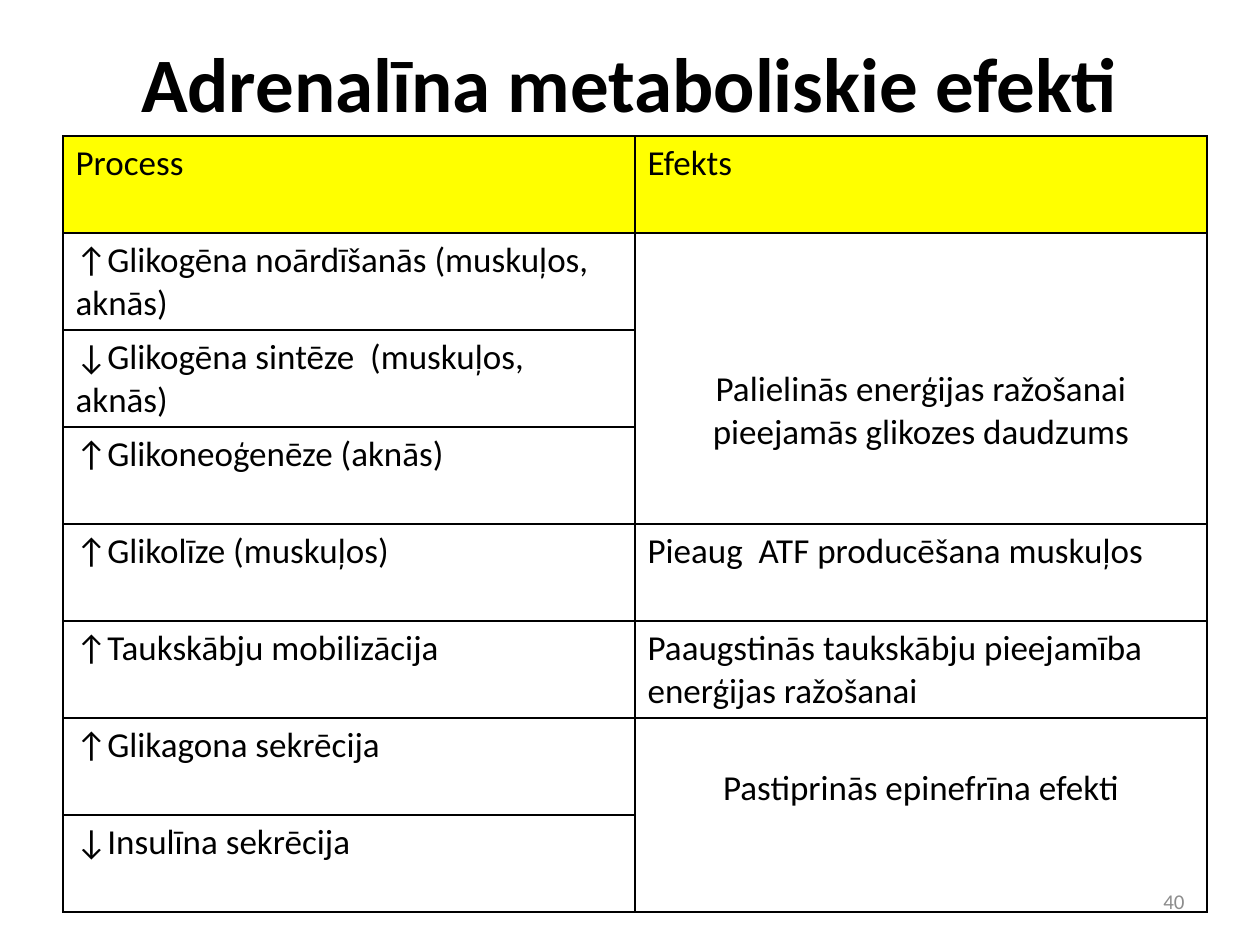
from dataclasses import dataclass

import pptx
import pptx.dml.color
import pptx.enum.text
import pptx.oxml
import pptx.oxml.ns
import pptx.util
from pptx.util import Inches

ALIGN = pptx.enum.text.PP_ALIGN
FONT = "Calibri"
BLACK = "000000"
YELLOW = "FFFF00"
GREY = "8C8C8C"
ROW_HEIGHT = 0.77
COLUMN_WIDTH = 4.54


@dataclass
class Effect:
    text: str
    processes: list[str]
    top_margin: float = 0.05
    align: ALIGN = ALIGN.LEFT
    fill: str | None = None


EFFECTS = [
    Effect("Efekts", ["Process"], fill=YELLOW),
    Effect(
        "Palielinās enerģijas ražošanai pieejamās glikozes daudzums",
        [
            "↑Glikogēna noārdīšanās (muskuļos, aknās)",
            "↓Glikogēna sintēze  (muskuļos, aknās)",
            "↑Glikoneoģenēze (aknās)",
        ],
        top_margin=1.07,
        align=ALIGN.CENTER,
    ),
    Effect("Pieaug  ATF producēšana muskuļos", ["↑Glikolīze (muskuļos)"]),
    Effect(
        "Paaugstinās taukskābju pieejamība enerģijas ražošanai",
        ["↑Taukskābju mobilizācija"],
    ),
    Effect(
        "Pastiprinās epinefrīna efekti",
        ["↑Glikagona sekrēcija", "↓Insulīna sekrēcija"],
        top_margin=0.39,
        align=ALIGN.CENTER,
    ),
]


def color(value: str) -> pptx.dml.color.RGBColor:
    return pptx.dml.color.RGBColor.from_string(value)


def write(frame, text: str, size: float, align: ALIGN,
          ink: str = BLACK, bold: bool = False) -> None:
    frame.text = text
    paragraph = frame.paragraphs[0]
    paragraph.alignment = align
    for run in paragraph.runs:
        run.font.name = FONT
        run.font.size = pptx.util.Pt(size)
        run.font.bold = bold
        run.font.color.rgb = color(ink)


def add_label(slide, text: str, left: float, top: float, width: float, height: float,
              size: float, align: ALIGN, ink: str = BLACK, bold: bool = False) -> None:
    label = slide.shapes.add_textbox(
        Inches(left), Inches(top), Inches(width), Inches(height))
    label.text_frame.word_wrap = True
    label.text_frame.vertical_anchor = pptx.enum.text.MSO_ANCHOR.MIDDLE
    write(label.text_frame, text, size, align, ink, bold)


def style_cell(cell, fill: str | None) -> None:
    properties = cell._tc.get_or_add_tcPr()
    for side in ("lnL", "lnR", "lnT", "lnB"):
        properties.append(pptx.oxml.parse_xml(
            f'<a:{side} {pptx.oxml.ns.nsdecls("a")} w="{pptx.util.Pt(1)}">'
            f'<a:solidFill><a:srgbClr val="{BLACK}"/></a:solidFill></a:{side}>'))
    if fill:
        cell.fill.solid()
        cell.fill.fore_color.rgb = color(fill)
    else:
        cell.fill.background()


def add_effects_table(slide, effects: list[Effect]) -> None:
    row_count = sum(len(effect.processes) for effect in effects)
    table = slide.shapes.add_table(
        row_count, 2, Inches(0.5), Inches(1.08),
        Inches(2 * COLUMN_WIDTH), Inches(row_count * ROW_HEIGHT)).table
    table.first_row = False
    table.horz_banding = False
    for row in table.rows:
        row.height = Inches(ROW_HEIGHT)

    first = 0
    for effect in effects:
        last = first + len(effect.processes) - 1
        for row, process in enumerate(effect.processes, first):
            for column in range(2):
                style_cell(table.cell(row, column), effect.fill)
            write(table.cell(row, 0).text_frame, process, 20, ALIGN.LEFT)
        outcome = table.cell(first, 1)
        if last > first:
            outcome.merge(table.cell(last, 1))
        outcome.margin_top = Inches(effect.top_margin)
        write(outcome.text_frame, effect.text, 20, effect.align)
        first = last + 1


def main() -> None:
    deck = pptx.Presentation()
    deck.slide_width = Inches(10)
    deck.slide_height = Inches(7.5)
    slide = deck.slides.add_slide(deck.slide_layouts[6])
    add_label(slide, "Adrenalīna metaboliskie efekti", 0.5, 0.02, 9, 1.25,
              44, ALIGN.CENTER, bold=True)
    add_effects_table(slide, EFFECTS)
    add_label(slide, "40", 7.17, 6.95, 2.33, 0.4, 12, ALIGN.RIGHT, GREY)
    deck.save("out.pptx")


if __name__ == "__main__":
    main()
